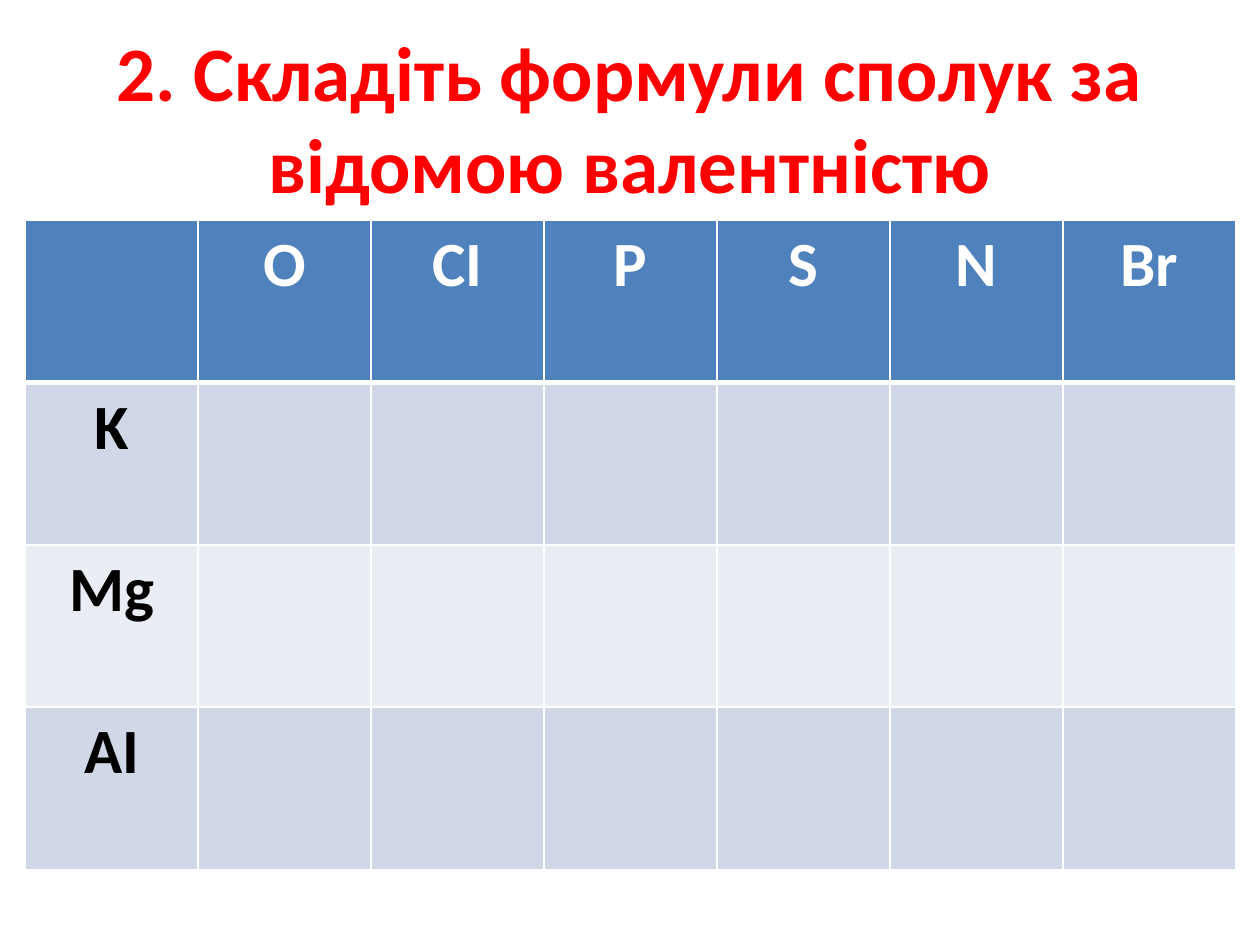
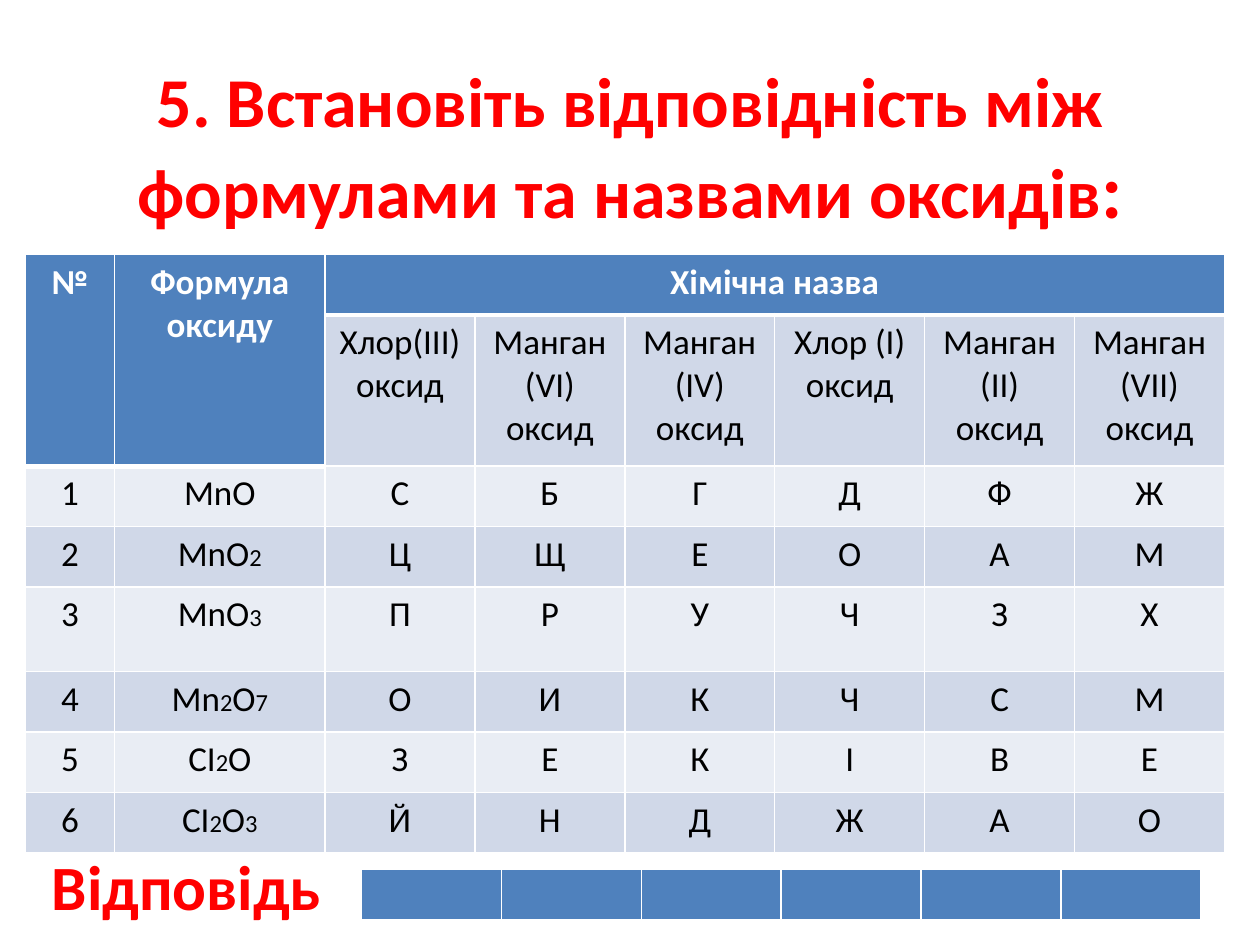
import itertools

import pptx
import pptx.dml.color
import pptx.enum.text
import pptx.oxml
import pptx.oxml.ns
import pptx.util

Inches = pptx.util.Inches
RGBColor = pptx.dml.color.RGBColor

# Content
VALENCY_TITLE = "2. Складіть формули сполук за відомою валентністю"
NONMETALS = ["O", "CI", "P", "S", "N", "Br"]
METALS = ["K", "Mg", "AI"]

OXIDES_TITLE = [("5. Встановіть відповідність між формулами та назвами оксидів", 40),
                (":", 44)]
OXIDE_HEADINGS = ["№", "Формула оксиду", "Хімічна назва"]
OXIDE_NAMES = ["Хлор(ІІІ) оксид", "Манган (VІ) оксид", "Манган\n(ІV) оксид",
               "Хлор (І) оксид", "Манган (ІІ) оксид", "Манган (VІІ) оксид"]
OXIDE_LETTERS = [
    ("MnO", "СБГДФЖ"),
    ("MnO2", "ЦЩЕОАМ"),
    ("MnO3", "ПРУЧЗХ"),
    ("Mn2O7", "ОИКЧСМ"),
    ("CI2O", "ЗЕКІВЕ"),
    ("CI2O3", "ЙНДЖАО"),
]
ANSWER_LABEL = "Відповідь"

# Shared style
FONT = "Calibri"
RED = RGBColor(0xFF, 0x00, 0x00)
BLACK = RGBColor(0x00, 0x00, 0x00)
WHITE = RGBColor(0xFF, 0xFF, 0xFF)
HEADER_BLUE = RGBColor(0x4F, 0x81, 0xBD)
BANDS = [RGBColor(0xD0, 0xD8, 0xE8), RGBColor(0xE9, 0xED, 0xF4)]
TABLE_LEFT = 0.2
DIGIT_SIZE = 14


def write_text(text_frame, text, size=20, color=BLACK, bold=False):
    """Write a string, or a list of (string, size) runs; newlines part paragraphs."""
    runs = [(text, size)] if isinstance(text, str) else text
    paragraph = text_frame.paragraphs[0]
    paragraph.alignment = pptx.enum.text.PP_ALIGN.CENTER
    for run_text, run_size in runs:
        for index, line in enumerate(run_text.split("\n")):
            if index:
                paragraph = text_frame.add_paragraph()
                paragraph.alignment = pptx.enum.text.PP_ALIGN.CENTER
            run = paragraph.add_run()
            run.text = line
            run.font.name = FONT
            run.font.size = pptx.util.Pt(run_size)
            run.font.bold = bold
            run.font.color.rgb = color


def add_text(slide, text, left, top, width, height, middle=False, **text_format):
    text_frame = slide.shapes.add_textbox(
        Inches(left), Inches(top), Inches(width), Inches(height)).text_frame
    text_frame.word_wrap = True
    if middle:
        text_frame.vertical_anchor = pptx.enum.text.MSO_ANCHOR.MIDDLE
    write_text(text_frame, text, **text_format)


def add_title(slide, text, height):
    add_text(slide, text, 0.5, 0.3, 9, height, middle=True, size=44, color=RED, bold=True)


def style_cell(cell, fill, top=1, bottom=1):
    """Draw white borders, then fill the cell."""
    properties = cell._tc.get_or_add_tcPr()
    for side, points in (("L", 1), ("R", 1), ("T", top), ("B", bottom)):
        properties.append(pptx.oxml.parse_xml(
            f'<a:ln{side} {pptx.oxml.ns.nsdecls("a")} w="{pptx.util.Pt(points)}">'
            f'<a:solidFill><a:srgbClr val="{WHITE}"/></a:solidFill></a:ln{side}>'))
    cell.fill.solid()
    cell.fill.fore_color.rgb = fill


def add_grid(slide, left, top, column_widths, row_heights, header_depths):
    """Add a banded table; header_depths holds the header rows of each column."""
    table = slide.shapes.add_table(
        len(row_heights), len(column_widths), Inches(left), Inches(top),
        Inches(sum(column_widths)), Inches(sum(row_heights))).table
    for column, width in zip(table.columns, column_widths):
        column.width = Inches(width)
    for row_index, height in enumerate(row_heights):
        table.rows[row_index].height = Inches(height)
        for column_index, depth in enumerate(header_depths):
            is_header = row_index < depth
            style_cell(table.cell(row_index, column_index),
                       HEADER_BLUE if is_header else BANDS[(row_index - 1) % 2],
                       top=3 if row_index == depth else 1,
                       bottom=3 if row_index == depth - 1 else 1)
    return table


def write_cell(table, row, column, text, **text_format):
    write_text(table.cell(row, column).text_frame, text, **text_format)


def formula_runs(formula):
    """Set the digits of a formula smaller than its letters."""
    return [("".join(part), DIGIT_SIZE if is_digit else 20)
            for is_digit, part in itertools.groupby(formula, str.isdigit)]


def build_valency_slide(slide):
    add_title(slide, VALENCY_TITLE, 1.25)
    column_count = len(NONMETALS) + 1
    row_count = len(METALS) + 1
    table = add_grid(slide, TABLE_LEFT, 1.75, [9.61 / column_count] * column_count,
                     [5.15 / row_count] * row_count, [1] * column_count)
    for column, symbol in enumerate(NONMETALS, 1):
        write_cell(table, 0, column, symbol, size=36, color=WHITE, bold=True)
    for row, symbol in enumerate(METALS, 1):
        write_cell(table, row, 0, symbol, size=36, bold=True)


def build_oxides_slide(slide):
    add_title(slide, OXIDES_TITLE, 1.72)
    name_count = len(OXIDE_NAMES)
    row_heights = [0.48, 1.2] + [0.48] * len(OXIDE_LETTERS)
    row_heights[4] = 0.67
    table = add_grid(slide, TABLE_LEFT, 2.02, [0.71, 1.67] + [1.19] * name_count,
                     row_heights, [2, 2] + [1] * name_count)

    # Merged headings
    for column in (0, 1):
        table.cell(0, column).merge(table.cell(1, column))
    table.cell(0, 2).merge(table.cell(0, name_count + 1))
    for column, heading in enumerate(OXIDE_HEADINGS):
        write_cell(table, 0, column, heading, color=WHITE, bold=True)

    # Names and letters
    for column, name in enumerate(OXIDE_NAMES, 2):
        write_cell(table, 1, column, name)
    for number, (formula, letters) in enumerate(OXIDE_LETTERS, 1):
        row_texts = [str(number), formula_runs(formula), *letters]
        for column, text in enumerate(row_texts):
            write_cell(table, number + 1, column, text)

    # Answer strip
    add_grid(slide, 2.87, 6.9, [1.11] * name_count, [0.41], [1] * name_count)
    add_text(slide, ANSWER_LABEL, -0.43, 6.68, 3.82, 0.71, size=36, color=RED, bold=True)


def main():
    presentation = pptx.Presentation()
    presentation.slide_width = Inches(10)
    presentation.slide_height = Inches(7.5)
    for build_slide in (build_valency_slide, build_oxides_slide):
        build_slide(presentation.slides.add_slide(presentation.slide_layouts[6]))
    presentation.save("out.pptx")


if __name__ == "__main__":
    main()
